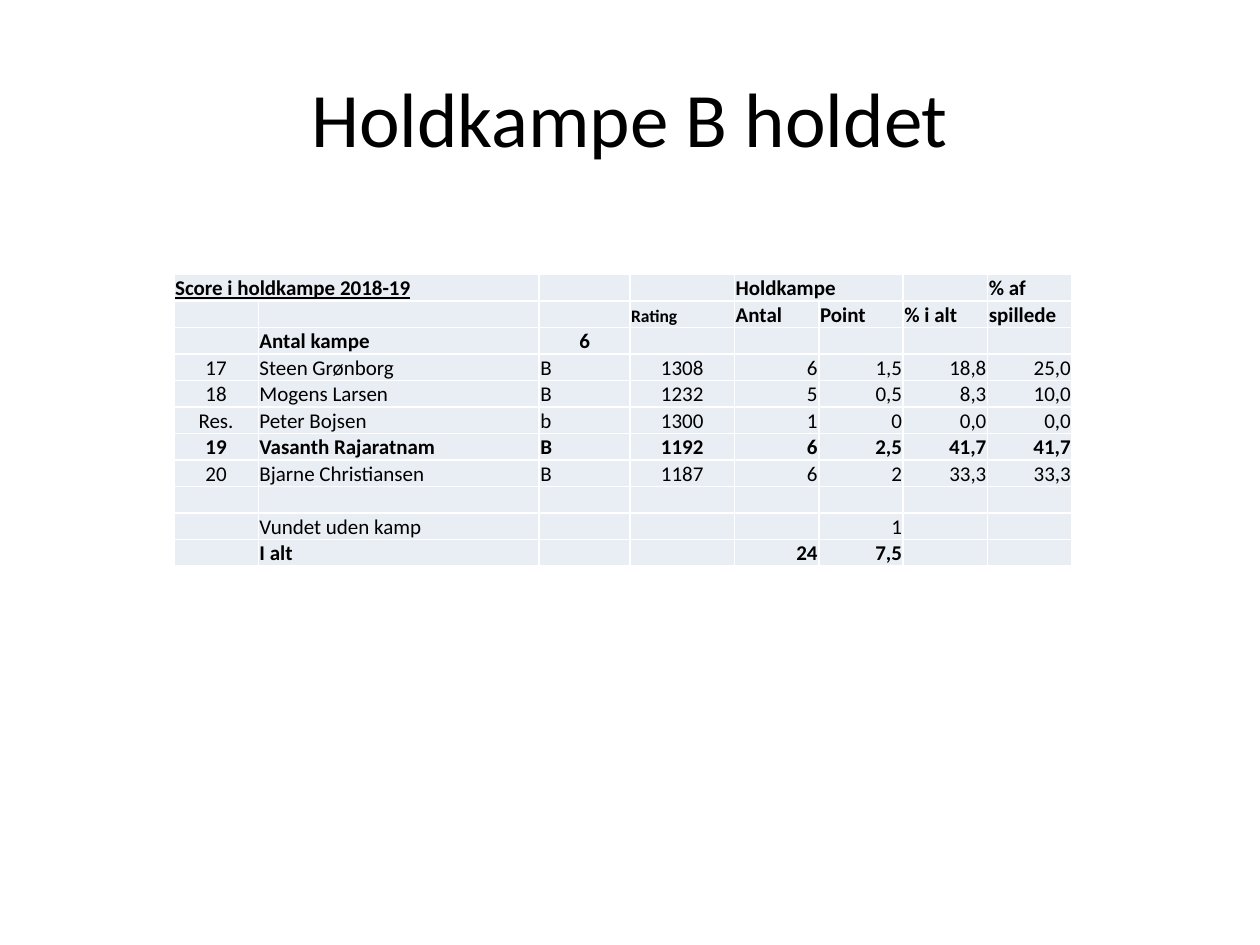
import pptx
import pptx.util
import pptx.dml.color
import pptx.enum.text
import pptx.oxml
import pptx.oxml.ns
from dataclasses import dataclass

Inches = pptx.util.Inches
Pt = pptx.util.Pt
Align = pptx.enum.text.PP_ALIGN
Anchor = pptx.enum.text.MSO_ANCHOR


@dataclass(frozen=True)
class Theme:
    font: str = "Calibri"
    ink: str = "000000"
    fill: str = "E9EDF4"
    rule: str = "FFFFFF"
    title: int = 44
    body: int = 12
    small: int = 10


THEME = Theme()
SIDES = {"l": Align.LEFT, "c": Align.CENTER, "r": Align.RIGHT}
WIDTHS = [0.67, 2.23, 0.72, 0.83] + [0.67] * 4
HEIGHT = 0.21

# Each row: bold, alignment of its columns, texts
HEAD, COUNT, SCORE = "llllllll", "clcccccc", "cllcrrrr"
ROWS = [
    (True, HEAD, ["Score i holdkampe 2018-19", "", "", "", "Holdkampe", "", "", "% af"]),
    (True, HEAD, ["", "", "", "Rating", "Antal", "Point", "% i alt", "spillede"]),
    (True, COUNT, ["", "Antal kampe", "6", "", "", "", "", ""]),
    (False, SCORE, ["17", "Steen Grønborg", "B", "1308", "6", "1,5", "18,8", "25,0"]),
    (False, SCORE, ["18", "Mogens Larsen", "B", "1232", "5", "0,5", "8,3", "10,0"]),
    (False, SCORE, ["Res.", "Peter Bojsen", "b", "1300", "1", "0", "0,0", "0,0"]),
    (True, SCORE, ["19", "Vasanth Rajaratnam", "B", "1192", "6", "2,5", "41,7", "41,7"]),
    (False, SCORE, ["20", "Bjarne Christiansen", "B", "1187", "6", "2", "33,3", "33,3"]),
    (False, SCORE, [""] * 8),
    (False, SCORE, ["", "Vundet uden kamp", "", "", "", "1", "", ""]),
    (True, SCORE, ["", "I alt", "", "", "24", "7,5", "", ""]),
]


def color(code):
    return pptx.dml.color.RGBColor.from_string(code)


def add_run(para, text, size, bold=False, line=False):
    run = para.add_run()
    run.text = text
    font = run.font
    font.name, font.size = THEME.font, Pt(size)
    font.bold, font.underline = bold, line
    font.color.rgb = color(THEME.ink)


def add_title(slide, text):
    box = slide.shapes.add_textbox(Inches(0.5), Inches(0.3), Inches(9), Inches(1.25))
    frame = box.text_frame
    frame.word_wrap = True
    frame.vertical_anchor = Anchor.MIDDLE
    para = frame.paragraphs[0]
    para.alignment = Align.CENTER
    add_run(para, text, THEME.title)


def add_edges(cell):
    props = cell._tc.get_or_add_tcPr()
    space = pptx.oxml.ns.nsdecls("a")
    for spot, side in enumerate("LRTB"):
        props.insert(spot, pptx.oxml.parse_xml(
            f'<a:ln{side} {space} w="{Pt(1)}"><a:solidFill>'
            f'<a:srgbClr val="{THEME.rule}"/></a:solidFill></a:ln{side}>'))


def fill_cell(cell, text, side, bold):
    cell.fill.solid()
    cell.fill.fore_color.rgb = color(THEME.fill)
    cell.vertical_anchor = Anchor.BOTTOM
    cell.margin_left = cell.margin_right = cell.margin_top = Inches(0.01)
    cell.margin_bottom = 0
    add_edges(cell)
    para = cell.text_frame.paragraphs[0]
    para.alignment = SIDES[side]
    if text:
        size = THEME.small if text == "Rating" else THEME.body
        add_run(para, text, size, bold, text.startswith("Score"))
    else:
        # Keep empty cells as low as the filled ones
        para._p.append(pptx.oxml.parse_xml(
            f'<a:endParaRPr {pptx.oxml.ns.nsdecls("a")} sz="{THEME.body * 100}">'
            f'<a:latin typeface="{THEME.font}"/></a:endParaRPr>'))


def add_scores(slide):
    frame = slide.shapes.add_table(
        len(ROWS), len(WIDTHS), Inches(1.38), Inches(2.18),
        Inches(sum(WIDTHS)), Inches(HEIGHT * len(ROWS)))
    table = frame.table
    for col, width in zip(table.columns, WIDTHS):
        col.width = Inches(width)
    for row, (bold, sides, texts) in zip(table.rows, ROWS):
        row.height = Inches(HEIGHT)
        for cell, text, side in zip(row.cells, texts, sides):
            fill_cell(cell, text, side, bold)
    # Headings that span two columns
    for left in (0, 4):
        table.cell(0, left).merge(table.cell(0, left + 1))


def main():
    deck = pptx.Presentation()
    deck.slide_width, deck.slide_height = Inches(10), Inches(7.5)
    slide = deck.slides.add_slide(deck.slide_layouts[6])
    add_title(slide, "Holdkampe B holdet")
    add_scores(slide)
    deck.save("out.pptx")


if __name__ == "__main__":
    main()
